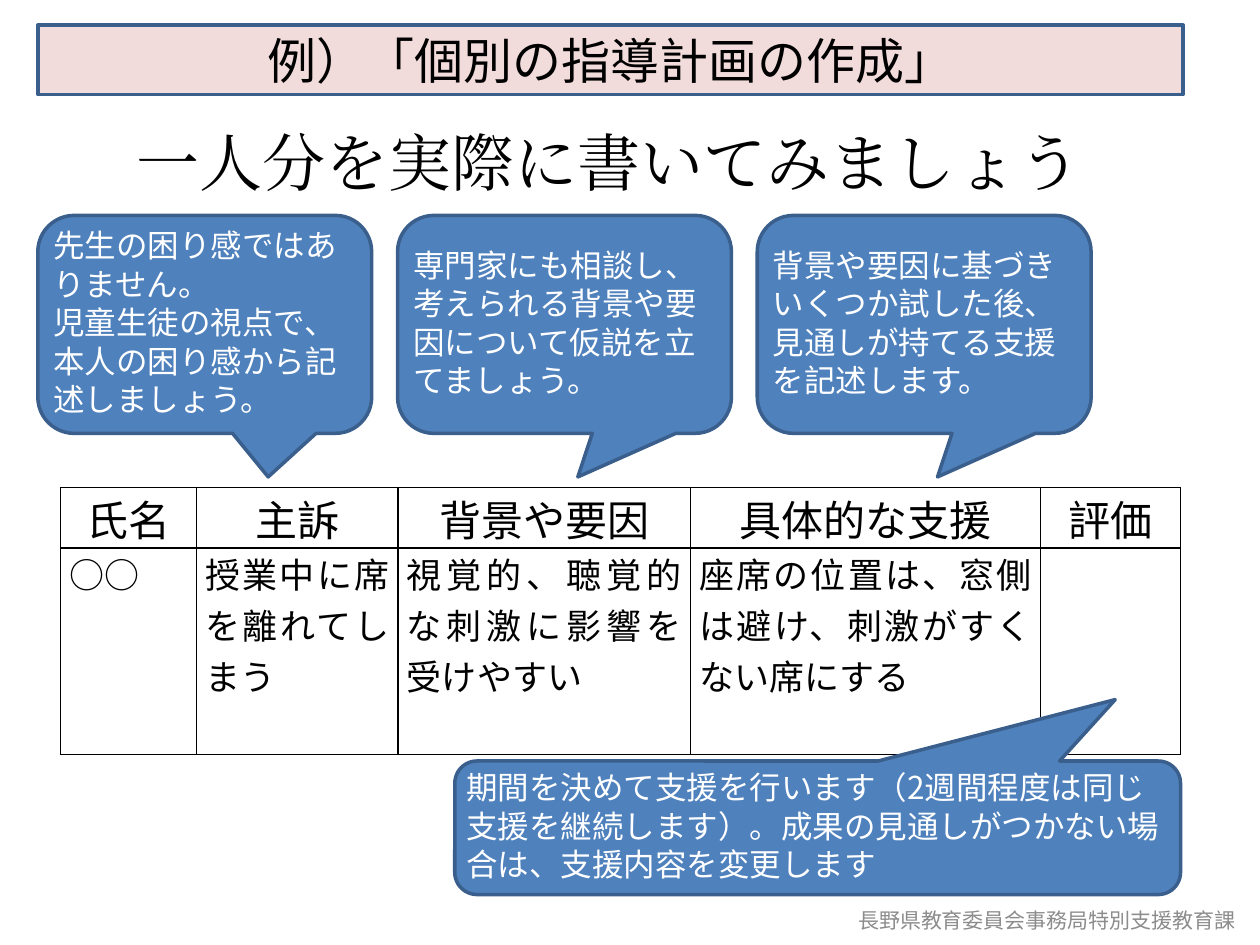
from lxml import etree
from pptx import Presentation
from pptx.dml.color import RGBColor
from pptx.enum.shapes import MSO_SHAPE
from pptx.enum.text import MSO_ANCHOR, PP_ALIGN
from pptx.oxml.ns import qn
from pptx.util import Inches, Pt

RECTANGLE = MSO_SHAPE.RECTANGLE
CALLOUT = MSO_SHAPE.ROUNDED_RECTANGULAR_CALLOUT
TOP, MIDDLE = MSO_ANCHOR.TOP, MSO_ANCHOR.MIDDLE
LEFT, CENTER, JUSTIFY = PP_ALIGN.LEFT, PP_ALIGN.CENTER, PP_ALIGN.JUSTIFY

# The slide is a grid of 100 columns by 75 rows; boxes are (left, top, width, height)
COLUMNS, ROWS = 100, 75
UNIT = Inches(10) // COLUMNS

COLORS = {
    "banner": "F2DCDB", "callout": "4F81BD", "outline": "3A5F8C",
    "ink": "000000", "paper": "FFFFFF", "muted": "8C8C8C",
}
GOTHIC = "Noto Sans CJK JP"

# Text formats: font, size, colour and paragraph settings
FORMATS = {
    "banner": (GOTHIC, 28, "ink", {"alignment": CENTER}),
    "heading": ("Times New Roman", 36, "ink", {"alignment": CENTER}),
    "footer": ("Calibri", 12, "muted", {"alignment": CENTER}),
    "callout": (GOTHIC, 18, "paper", {"alignment": LEFT, "line_spacing": Pt(22)}),
    "header": (GOTHIC, 24, "ink", {"alignment": CENTER}),
    "body": (GOTHIC, 20, "ink", {"alignment": JUSTIFY}),
}

CALLOUT_TEXTS = [
    ["先生の困り感ではありません。", "児童生徒の視点で、本人の困り感から記述しましょう。"],
    ["専門家にも相談し、考えられる背景や要因について仮説を立てましょう。"],
    ["背景や要因に基づきいくつか試した後、見通しが持てる支援を記述します。"],
]
CALLOUT_TAILS = [(0.19, 0.7), (0.04, 0.7), (0.04, 0.7)]
EVALUATION_TEXT = [
    "期間を決めて支援を行います（2週間程度は同じ支援を継続します）。"
    "成果の見通しがつかない場合は、支援内容を変更します"
]
PLAN_ROWS = [
    ["氏名", "主訴", "背景や要因", "具体的な支援", "評価"],
    ["○○", "授業中に席を離れてしまう", "視覚的、聴覚的な刺激に影響を受けやすい",
     "座席の位置は、窓側は避け、刺激がすくない席にする", ""],
]
PLAN_COLUMNS = [10.8, 16, 23.2, 27.8, 11.1]
PLAN_HEIGHTS = [4.8, 16.4]


def grid(*lengths):
    return [round(length * UNIT) for length in lengths]


def color(name):
    return RGBColor.from_string(COLORS[name])


def write(text_frame, lines, format_name):
    font_name, size, color_name, settings = FORMATS[format_name]
    for index, line in enumerate(lines):
        paragraph = text_frame.paragraphs[0] if index == 0 else text_frame.add_paragraph()
        for key, value in settings.items():
            setattr(paragraph, key, value)
        run = paragraph.add_run()
        run.text = line
        run.font.size = Pt(size)
        run.font.color.rgb = color(color_name)
        run.font.name = font_name
        # East Asian characters need their own typeface entry
        east_asian = etree.SubElement(run.font._element, qn("a:ea"))
        east_asian.set("typeface", font_name)


def add_panel(slide, kind, box, fill, lines, format_name):
    shape = slide.shapes.add_shape(kind, *grid(*box))
    shape.shadow.inherit = False
    shape.fill.solid()
    shape.fill.fore_color.rgb = color(fill)
    shape.line.color.rgb = color("outline")
    shape.line.width = Pt(2)
    shape.text_frame.word_wrap = True
    shape.text_frame.vertical_anchor = MIDDLE
    write(shape.text_frame, lines, format_name)
    return shape


def add_label(slide, box, text, format_name, anchor):
    text_frame = slide.shapes.add_textbox(*grid(*box)).text_frame
    text_frame.word_wrap = True
    text_frame.vertical_anchor = anchor
    write(text_frame, [text], format_name)


def add_callout(slide, box, lines, tail):
    shape = add_panel(slide, CALLOUT, box, "callout", lines, "callout")
    for index, value in enumerate(tail):
        shape.adjustments[index] = value
    margins = {"margin_left": 0.4, "margin_top": 0.4, "margin_right": 0.4, "margin_bottom": 0.8}
    for key, value in margins.items():
        setattr(shape.text_frame, key, grid(value)[0])


def add_callout_row(slide, box, gap):
    left, top, width, height = box
    count = len(CALLOUT_TEXTS)
    callout_width = (width - gap * (count - 1)) / count
    for index, (lines, tail) in enumerate(zip(CALLOUT_TEXTS, CALLOUT_TAILS)):
        callout_left = left + index * (callout_width + gap)
        add_callout(slide, (callout_left, top, callout_width, height), lines, tail)


def add_borders(cell):
    properties = cell._tc.get_or_add_tcPr()
    for index, side in enumerate(("lnL", "lnR", "lnT", "lnB")):
        line = etree.Element(qn(f"a:{side}"), w=str(Pt(1)))
        fill = etree.SubElement(line, qn("a:solidFill"))
        etree.SubElement(fill, qn("a:srgbClr"), val=COLORS["ink"])
        properties.insert(index, line)


def add_plan_table(slide, left, top):
    box = (left, top, sum(PLAN_COLUMNS), sum(PLAN_HEIGHTS))
    table = slide.shapes.add_table(len(PLAN_ROWS), len(PLAN_COLUMNS), *grid(*box)).table
    table.first_row = table.horz_banding = False
    for column, width in zip(table.columns, grid(*PLAN_COLUMNS)):
        column.width = width
    margins = {"margin_left": 0.7, "margin_top": 0, "margin_right": 0.7, "margin_bottom": 0}
    for row, height, texts, format_name in zip(
            table.rows, grid(*PLAN_HEIGHTS), PLAN_ROWS, ("header", "body")):
        row.height = height
        for cell, text in zip(row.cells, texts):
            cell.fill.background()
            add_borders(cell)
            for key, value in margins.items():
                setattr(cell, key, grid(value)[0])
            if text:
                write(cell.text_frame, [text], format_name)


def main():
    presentation = Presentation()
    presentation.slide_width, presentation.slide_height = grid(COLUMNS, ROWS)
    slide = presentation.slides.add_slide(presentation.slide_layouts[6])

    # Banner and footer
    add_panel(slide, RECTANGLE, (3, 2, 90.9, 5.5), "banner",
              ["例）「個別の指導計画の作成」"], "banner")
    add_label(slide, (66.2, 71, 33.8, 4), "長野県教育委員会事務局特別支援教育課",
              "footer", MIDDLE)
    # Plan table with the advice around it
    add_plan_table(slide, 4.8, 38.7)
    add_callout_row(slide, (3, 17.1, 83.6, 17.3), gap=2.05)
    add_callout(slide, (36.1, 60.4, 57.6, 10.6), EVALUATION_TEXT, (0.41, -0.96))
    # Heading
    add_label(slide, (3, 9.3, 90.6, 7.1), "一人分を実際に書いてみましょう", "heading", TOP)

    presentation.save("out.pptx")


if __name__ == "__main__":
    main()
